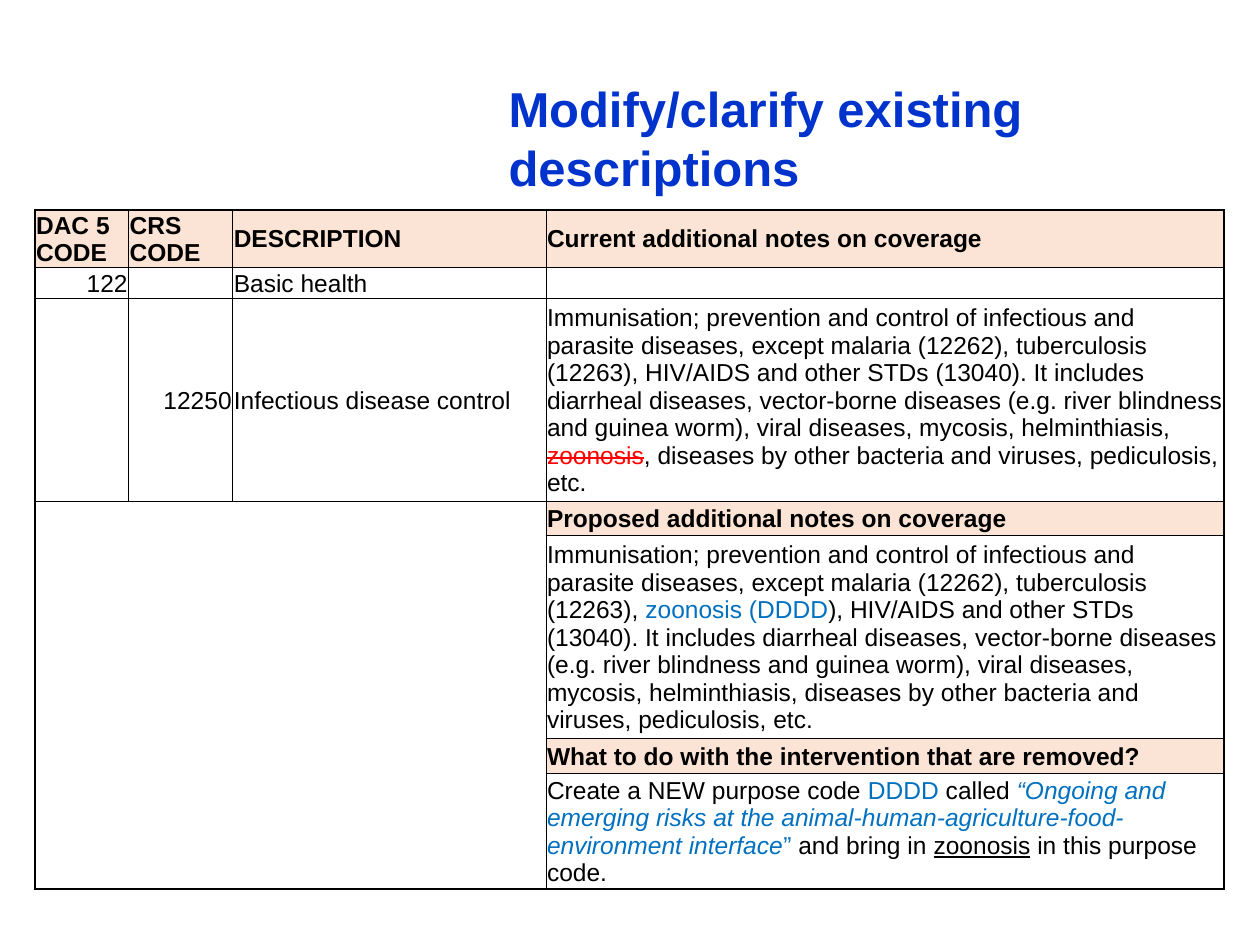
"""Build the slide on modified purpose code descriptions."""
from dataclasses import dataclass

import lxml.etree
import pptx
import pptx.dml.color
import pptx.enum.text
import pptx.oxml.ns
import pptx.slide
import pptx.table
import pptx.text.text
import pptx.util

Pt = pptx.util.Pt


@dataclass(frozen=True)
class Theme:
    font: str = "Arial"
    title_size: float = 28
    table_size: float = 14
    title: str = "0033CC"
    ink: str = "000000"
    removed: str = "FF0000"
    added: str = "0070C0"
    heading_fill: str = "FBE4D5"
    outer_line: float = 1
    inner_line: float = 0.5


THEME = Theme()


@dataclass(frozen=True)
class Words:
    text: str
    color: str = THEME.ink
    size: float = THEME.table_size
    bold: bool = False
    italic: bool = False
    underline: bool = False
    strike: bool = False


@dataclass(frozen=True)
class Entry:
    row: int
    column: int
    words: tuple[Words, ...] = ()
    heading: bool = False
    right: bool = False
    row_span: int = 1
    column_span: int = 1
    top_line: bool = True
    bottom_line: bool = True


COLUMN_WIDTHS = (53.5, 59.5, 179, 387.5)
ROW_HEIGHTS = (33, 17, 116, 19.5, 116, 20, 66)
LEFT, TOP = 20, 120


def heading(row: int, column: int, text: str) -> Entry:
    """Describe a shaded heading cell."""
    return Entry(row, column, (Words(text, bold=True),), heading=True)


def plain(row: int, column: int, text: str, right: bool = False) -> Entry:
    """Describe a cell with one plain wording."""
    return Entry(row, column, (Words(text),), right=right)


OPENING = ("Immunisation; prevention and control of infectious and parasite diseases, "
           "except malaria (12262), tuberculosis (12263), ")
MIDDLE = ("HIV/AIDS and other STDs (13040). It includes diarrheal diseases, "
          "vector-borne diseases (e.g. river blindness and guinea worm), "
          "viral diseases, mycosis, helminthiasis, ")
CLOSING = "diseases by other bacteria and viruses, pediculosis, etc."

ENTRIES = (
    heading(0, 0, "DAC 5 CODE"),
    heading(0, 1, "CRS CODE"),
    heading(0, 2, "DESCRIPTION"),
    heading(0, 3, "Current additional notes on coverage"),
    plain(1, 0, "122", right=True),
    Entry(1, 1),
    plain(1, 2, "Basic health"),
    Entry(1, 3),
    Entry(2, 0),
    plain(2, 1, "12250", right=True),
    plain(2, 2, "Infectious disease control"),
    Entry(2, 3, (
        Words(OPENING + MIDDLE),
        Words("zoonosis", THEME.removed, strike=True),
        Words(", " + CLOSING),
    )),
    Entry(3, 0, row_span=2, column_span=3, bottom_line=False),
    heading(3, 3, "Proposed additional notes on coverage"),
    Entry(4, 3, (
        Words(OPENING),
        Words("zoonosis (DDDD", THEME.added),
        Words("), " + MIDDLE + CLOSING),
    )),
    Entry(5, 0, column_span=3, top_line=False, bottom_line=False),
    heading(5, 3, "What to do with the intervention that are removed?"),
    Entry(6, 0, column_span=3, top_line=False),
    Entry(6, 3, (
        Words("Create a NEW purpose code "),
        Words("DDDD", THEME.added),
        Words(" called "),
        Words("“Ongoing and emerging risks at the "
              "animal-human-agriculture-food-environment interface",
              THEME.added, italic=True),
        Words("” ", THEME.added),
        Words("and bring in "),
        Words("zoonosis", underline=True),
        Words(" in this purpose code."),
    )),
)


def add_words(paragraph: pptx.text.text._Paragraph, words: Words) -> None:
    """Add one formatted run to a paragraph."""
    run = paragraph.add_run()
    run.text = words.text
    font = run.font
    font.name, font.size = THEME.font, Pt(words.size)
    font.bold, font.italic, font.underline = words.bold, words.italic, words.underline
    font.color.rgb = pptx.dml.color.RGBColor.from_string(words.color)
    if words.strike:
        run._r.get_or_add_rPr().set("strike", "sngStrike")


def add_border(cell: pptx.table._Cell, side: str, width: float) -> None:
    """Add one cell edge, left undrawn at zero width."""
    qn = pptx.oxml.ns.qn
    edge = lxml.etree.SubElement(cell._tc.get_or_add_tcPr(), qn(f"a:ln{side}"))
    if width:
        edge.set("w", str(Pt(width)))
        fill = lxml.etree.SubElement(edge, qn("a:solidFill"))
        lxml.etree.SubElement(fill, qn("a:srgbClr")).set("val", THEME.ink)
    else:
        lxml.etree.SubElement(edge, qn("a:noFill"))


def fill_entry(table: pptx.table.Table, entry: Entry) -> None:
    """Merge, border, shade and write one table entry."""
    cell = table.cell(entry.row, entry.column)
    end_row = entry.row + entry.row_span
    end_column = entry.column + entry.column_span
    if entry.row_span * entry.column_span > 1:
        cell.merge(table.cell(end_row - 1, end_column - 1))
    edges = (
        ("L", entry.column == 0, True),
        ("R", end_column == len(COLUMN_WIDTHS), True),
        ("T", entry.row == 0, entry.top_line),
        ("B", end_row == len(ROW_HEIGHTS), entry.bottom_line),
    )
    for side, outer, drawn in edges:
        width = THEME.outer_line if outer else THEME.inner_line
        add_border(cell, side, width if drawn else 0)
    if entry.heading:
        cell.fill.solid()
        cell.fill.fore_color.rgb = pptx.dml.color.RGBColor.from_string(THEME.heading_fill)
    else:
        cell.fill.background()
    paragraph = cell.text_frame.paragraphs[0]
    if entry.right:
        paragraph.alignment = pptx.enum.text.PP_ALIGN.RIGHT
    for words in entry.words:
        add_words(paragraph, words)


def add_codes_table(slide: pptx.slide.Slide) -> None:
    """Add the table of codes and coverage notes."""
    table = slide.shapes.add_table(
        len(ROW_HEIGHTS), len(COLUMN_WIDTHS), Pt(LEFT), Pt(TOP),
        Pt(sum(COLUMN_WIDTHS)), Pt(sum(ROW_HEIGHTS))).table
    table.first_row = table.horz_banding = False
    for column, width in zip(table.columns, COLUMN_WIDTHS):
        column.width = Pt(width)
    for row, height in zip(table.rows, ROW_HEIGHTS):
        row.height = Pt(height)
    for cell in table.iter_cells():
        cell.margin_left = cell.margin_right = cell.margin_top = Pt(0.6)
        cell.margin_bottom = 0
        cell.vertical_anchor = pptx.enum.text.MSO_ANCHOR.MIDDLE
        ending = lxml.etree.SubElement(
            cell.text_frame.paragraphs[0]._p, pptx.oxml.ns.qn("a:endParaRPr"))
        ending.set("sz", str(int(THEME.table_size * 100)))
    for entry in ENTRIES:
        fill_entry(table, entry)


def add_title(slide: pptx.slide.Slide) -> None:
    """Add the slide title."""
    frame = slide.shapes.add_textbox(Pt(283.5), Pt(41), Pt(436.5), Pt(75)).text_frame
    frame.word_wrap = True
    frame.auto_size = pptx.enum.text.MSO_AUTO_SIZE.SHAPE_TO_FIT_TEXT
    frame.vertical_anchor = pptx.enum.text.MSO_ANCHOR.MIDDLE
    add_words(frame.paragraphs[0], Words(
        "Modify/clarify existing descriptions", THEME.title, THEME.title_size, bold=True))


def main() -> None:
    """Build and save the presentation."""
    deck = pptx.Presentation()
    deck.slide_width, deck.slide_height = Pt(720), Pt(540)
    slide = deck.slides.add_slide(deck.slide_layouts[6])
    add_codes_table(slide)
    add_title(slide)
    deck.save("out.pptx")


if __name__ == "__main__":
    main()
